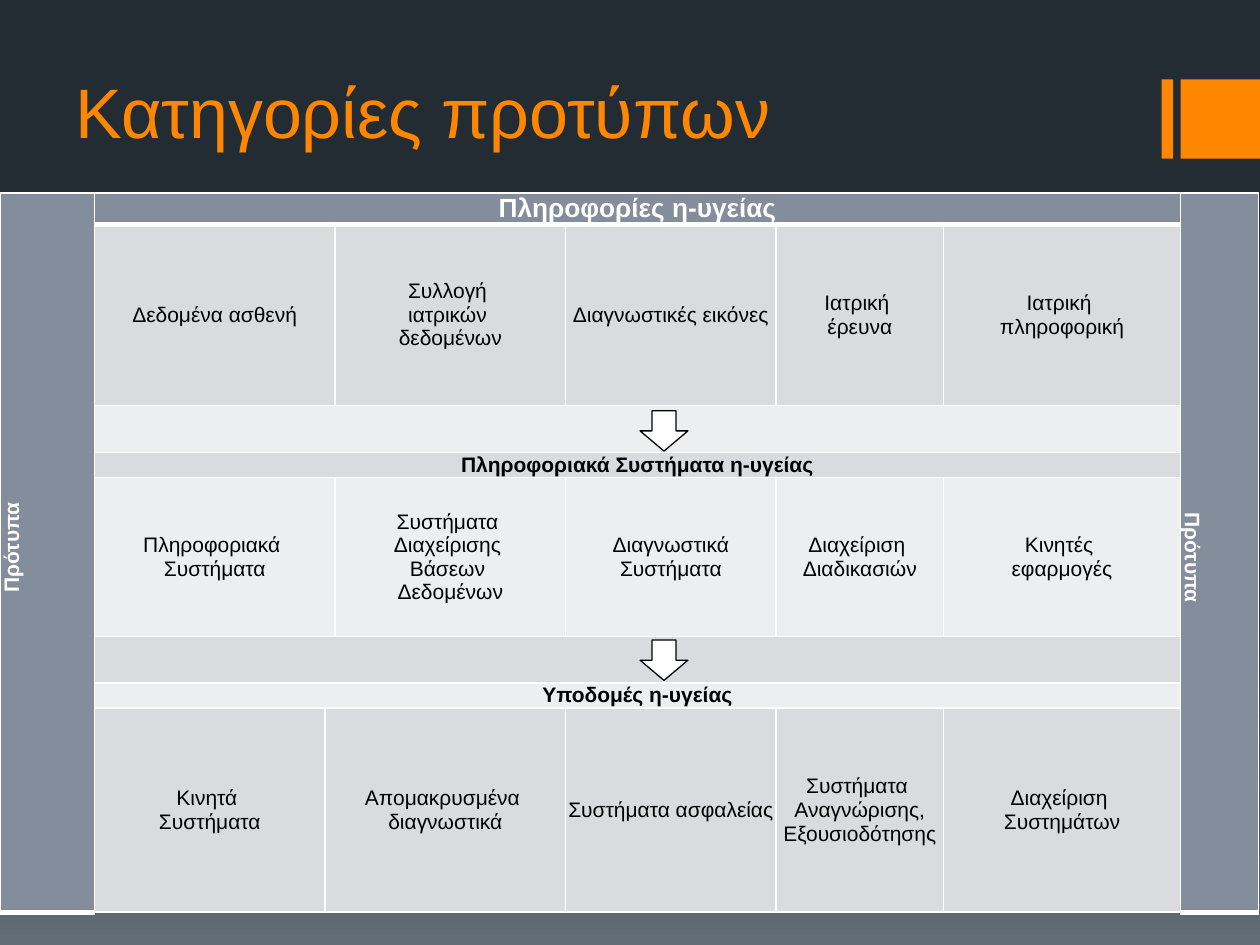
from copy import deepcopy
from dataclasses import dataclass
from itertools import product

from pptx import Presentation, util as u
from pptx.dml.color import RGBColor
from pptx.enum import shapes, text
from pptx.oxml.ns import qn
from lxml import etree


@dataclass(frozen=True)
class Theme:
    font: str = "Arial"
    accent: str = "FF8600"
    white: str = "FFFFFF"
    black: str = "000000"
    header: str = "838D9B"
    dark_band: str = "D9DBDE"
    light_band: str = "EDEEEF"
    backdrop: tuple = ((0, "242C33"), (0.65, "273037"), (1, "636D76"))
    title_size: int = 40
    header_size: int = 15
    body_size: int = 12
    thin: int = 1
    thick: int = 3


THEME = Theme()


@dataclass(frozen=True)
class Region:
    row: int
    col: int
    label: str
    fill: str
    rows: int = 1
    cols: int = 1
    size: int = THEME.body_size
    color: str = THEME.black
    bold: bool = False
    vert: str = ""
    bottom: int = THEME.thin


@dataclass(frozen=True)
class Block:
    preset: shapes.MSO_SHAPE
    left: float
    top: float
    width: float
    height: float
    fill: str
    outline: str = ""


COLUMNS = (0.75, 1.83, 0.08, 1.83, 1.67, 1.33, 1.88, 0.62)
ROWS = (0.24, 1.44, 0.37, 0.19, 1.26, 0.37, 0.19, 1.62)
HEADER = dict(fill=THEME.header, color=THEME.white, bold=True, bottom=THEME.thick)


def band(row: int, fill: str, label: str = "") -> Region:
    return Region(row, 1, label, fill, cols=6, bold=True)


def categories(row: int, fill: str, starts: tuple, labels: tuple) -> list[Region]:
    ends = starts[1:] + (7,)
    return [Region(row, start, label, fill, cols=end - start)
            for start, end, label in zip(starts, ends, labels)]


REGIONS = [
    Region(0, 0, "Πρότυπα", rows=8, vert="vert270", **HEADER),
    Region(0, 1, "Πληροφορίες η-υγείας", cols=6, size=THEME.header_size, **HEADER),
    Region(0, 7, "Πρότυπα", rows=8, vert="vert", **HEADER),
    *categories(1, THEME.dark_band, (1, 3, 4, 5, 6), (
        "Δεδομένα ασθενή", "Συλλογή \nιατρικών \nδεδομένων",
        "Διαγνωστικές εικόνες", "Ιατρική \nέρευνα", "Ιατρική \nπληροφορική")),
    band(2, THEME.light_band),
    band(3, THEME.dark_band, "Πληροφοριακά Συστήματα η-υγείας"),
    *categories(4, THEME.light_band, (1, 3, 4, 5, 6), (
        "Πληροφοριακά \nΣυστήματα", "Συστήματα \nΔιαχείρισης \nΒάσεων \nΔεδομένων",
        "Διαγνωστικά Συστήματα", "Διαχείριση \nΔιαδικασιών", "Κινητές \nεφαρμογές")),
    band(5, THEME.dark_band),
    band(6, THEME.light_band, "Υποδομές η-υγείας"),
    *categories(7, THEME.dark_band, (1, 2, 4, 5, 6), (
        "Κινητά \nΣυστήματα", "Απομακρυσμένα \nδιαγνωστικά", "Συστήματα ασφαλείας",
        "Συστήματα \nΑναγνώρισης, Εξουσιοδότησης", "Διαχείριση \nΣυστημάτων")),
]

ACCENTS = [Block(shapes.MSO_SHAPE.RECTANGLE, left, 0.63, width, 0.63, THEME.accent)
           for left, width in ((9.22, 0.09), (9.37, 0.63))]
ARROWS = [Block(shapes.MSO_SHAPE.DOWN_ARROW, 5.08, top, 0.38, 0.32, THEME.white, THEME.black)
          for top in (3.26, 5.08)]


def rgb(value: str) -> RGBColor:
    return RGBColor.from_string(value)


def apply(target, formats: dict) -> None:
    for name, value in formats.items():
        setattr(target, name, value)


def write(paragraph, label: str, size: int, color: str, bold: bool = False) -> None:
    paragraph.text = label
    for run in paragraph.runs:
        apply(run.font, dict(name=THEME.font, size=u.Pt(size), bold=bold))
        run.font.color.rgb = rgb(color)
    for line_break in paragraph._p.findall(qn("a:br")):
        line_break.insert(0, deepcopy(paragraph.runs[0]._r.rPr))


def paint_backdrop(slide) -> None:
    fill = slide.background.fill
    fill.gradient()
    fill.gradient_angle = 270
    first = fill.gradient_stops[0]._gs
    first.addnext(deepcopy(first))
    for stop, (position, color) in zip(fill.gradient_stops, THEME.backdrop):
        stop.position = position
        stop.color.rgb = rgb(color)


def draw_block(slide, block: Block) -> None:
    shape = slide.shapes.add_shape(block.preset, *map(
        u.Inches, (block.left, block.top, block.width, block.height)))
    shape.shadow.inherit = False
    shape.fill.solid()
    shape.fill.fore_color.rgb = rgb(block.fill)
    if block.outline:
        shape.line.color.rgb = rgb(block.outline)
        shape.line.width = u.Pt(0.75)
    else:
        shape.line.fill.background()


def draw_title(slide) -> None:
    frame = slide.shapes.add_textbox(
        u.Inches(0.5), 0, u.Inches(8.5), u.Inches(1.26)).text_frame
    apply(frame, dict(word_wrap=True, vertical_anchor=text.MSO_ANCHOR.BOTTOM))
    write(frame.paragraphs[0], "Κατηγορίες προτύπων", THEME.title_size, THEME.accent)


def style_cell(cell, region: Region) -> None:
    apply(cell, dict(margin_left=u.Inches(0.02), margin_right=u.Inches(0.02),
                     margin_top=0, margin_bottom=0,
                     vertical_anchor=text.MSO_ANCHOR.MIDDLE))
    properties = cell._tc.get_or_add_tcPr()
    for side in ("L", "R", "T", "B"):
        width = region.bottom if side == "B" else THEME.thin
        line = etree.SubElement(properties, qn(f"a:ln{side}"), w=str(u.Pt(width)))
        solid = etree.SubElement(line, qn("a:solidFill"))
        etree.SubElement(solid, qn("a:srgbClr"), val=THEME.white)
    cell.fill.solid()
    cell.fill.fore_color.rgb = rgb(region.fill)


def draw_region(table, region: Region) -> None:
    last_row, last_col = region.row + region.rows, region.col + region.cols
    for row, col in product(range(region.row, last_row), range(region.col, last_col)):
        style_cell(table.cell(row, col), region)
    origin = table.cell(region.row, region.col)
    if region.rows * region.cols > 1:
        origin.merge(table.cell(last_row - 1, last_col - 1))
    paragraph = origin.text_frame.paragraphs[0]
    paragraph.alignment = text.PP_ALIGN.CENTER
    if region.vert:
        origin._tc.tcPr.set("vert", region.vert)
        paragraph._p.get_or_add_pPr().set("marL", str(u.Inches(0.08)))
    if region.label:
        write(paragraph, region.label, region.size, region.color, region.bold)


def draw_table(slide) -> None:
    table = slide.shapes.add_table(
        len(ROWS), len(COLUMNS), 0, u.Inches(1.53), u.Inches(10), u.Inches(sum(ROWS))).table
    for column, width in zip(table.columns, COLUMNS):
        column.width = u.Inches(width)
    for row, height in zip(table.rows, ROWS):
        row.height = u.Inches(height)
    for region in REGIONS:
        draw_region(table, region)


def main() -> None:
    deck = Presentation()
    apply(deck, dict(slide_width=u.Inches(10), slide_height=u.Inches(7.5)))
    slide = deck.slides.add_slide(deck.slide_layouts[6])
    paint_backdrop(slide)
    for accent in ACCENTS:
        draw_block(slide, accent)
    draw_title(slide)
    draw_table(slide)
    for arrow in ARROWS:
        draw_block(slide, arrow)
    deck.save("out.pptx")


if __name__ == "__main__":
    main()
